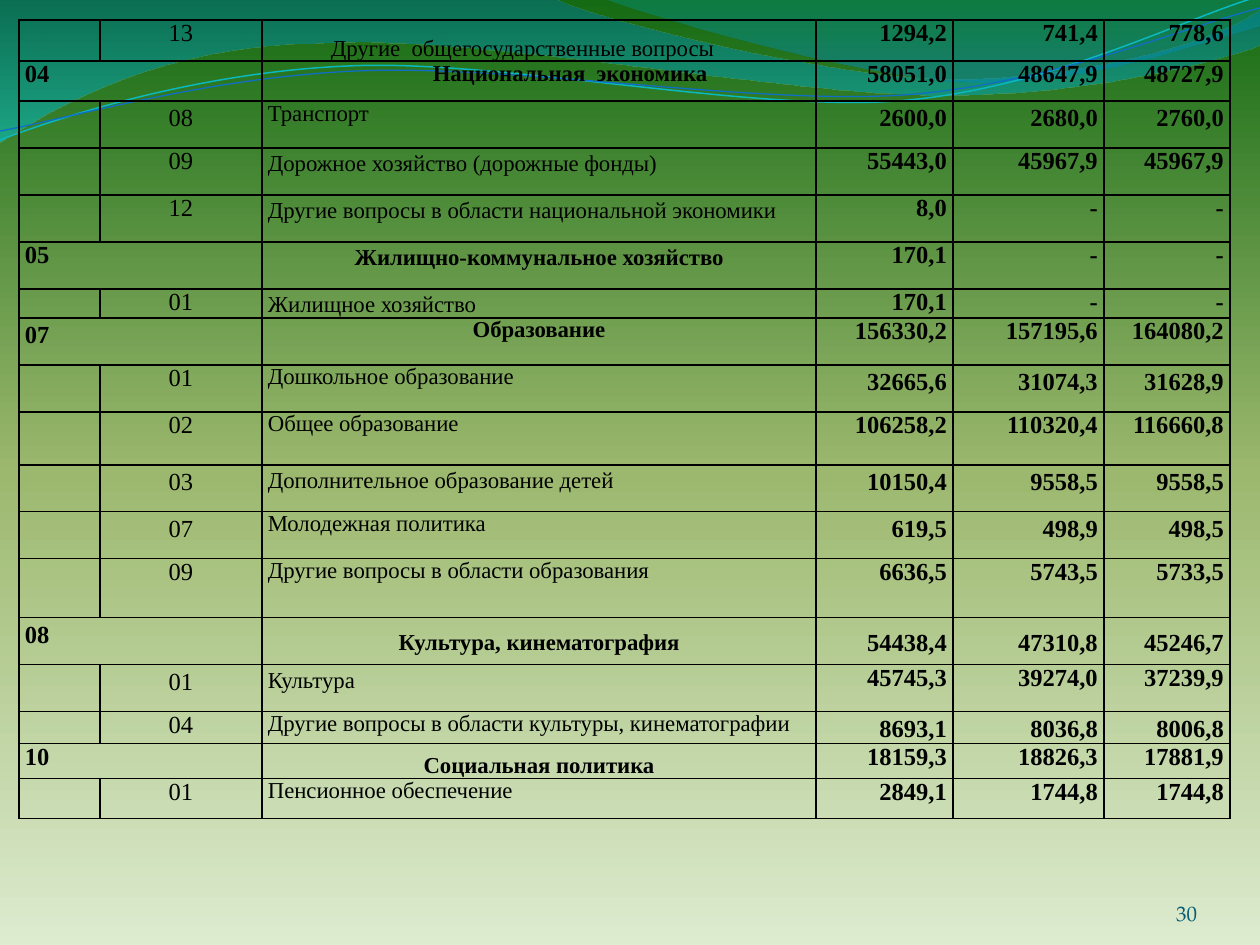
"""Builds a budget expenditure table slide on a green gradient with waves."""
import math
from dataclasses import dataclass, replace
from typing import NamedTuple, Optional

from lxml import etree
from pptx import Presentation
from pptx.dml.color import RGBColor
from pptx.enum.text import MSO_ANCHOR, PP_ALIGN
from pptx.oxml.ns import qn
from pptx.util import Pt

SCALE = 914400 / 126
LEFT, CENTER, RIGHT, JUSTIFY = PP_ALIGN.LEFT, PP_ALIGN.CENTER, PP_ALIGN.RIGHT, PP_ALIGN.JUSTIFY
TOP, MIDDLE, BOTTOM = MSO_ANCHOR.TOP, MSO_ANCHOR.MIDDLE, MSO_ANCHOR.BOTTOM
BLACK = "000000"
TILT = 2.7
PIVOT = (629, 72)


@dataclass(frozen=True)
class Style:
    align: PP_ALIGN = LEFT
    size: int = 14
    bold: bool = False
    anchor: MSO_ANCHOR = TOP
    spacing: Optional[float] = None
    before: int = 0
    after: int = 0
    margin: int = 0
    indent: int = 0
    font: str = "Times New Roman"
    color: str = BLACK


class Stop(NamedTuple):
    pos: int
    color: str
    alpha: int = 100


class Wave(NamedTuple):
    start: tuple
    segments: list
    stops: Optional[list] = None
    color: Optional[str] = None
    width: float = 0


class Row(NamedTuple):
    height: int
    code: str
    title: str
    values: str
    loose: str = ""
    section: bool = False
    title_style: dict = {}
    value_style: dict = {}


LOOSE = {"spacing": 1.15, "after": 10}
COLUMNS = [81, 162, 554, 137, 151, 126]
ROWS = [
    Row(41, "13", "Другие  общегосударственные вопросы", "1294,2 741,4 778,6",
        title_style={"align": LEFT, "anchor": BOTTOM, "margin": 78, "indent": -15}),
    Row(40, "04", "Национальная  экономика", "58051,0 48647,9 48727,9", section=True,
        title_style={"indent": 62}),
    Row(47, "08", "Транспорт", "2600,0 2680,0 2760,0", "code values"),
    Row(47, "09", "Дорожное хозяйство (дорожные фонды)", "55443,0 45967,9 45967,9", "title"),
    Row(47, "12", "Другие вопросы в области национальной экономики", "8,0 - -", "title"),
    Row(47, "05", "Жилищно-коммунальное хозяйство", "170,1 - -", "title", True),
    Row(29, "01", "Жилищное хозяйство", "170,1 - -", "title"),
    Row(47, "07", "Образование", "156330,2 157195,6 164080,2", "code", True),
    Row(47, "01", "Дошкольное образование", "32665,6 31074,3 31628,9", "values"),
    Row(53, "02", "Общее образование", "106258,2 110320,4 116660,8"),
    Row(47, "03", "Дополнительное образование детей", "10150,4 9558,5 9558,5",
        "code title values"),
    Row(47, "07", "Молодежная политика", "619,5 498,9 498,5", "code values"),
    Row(59, "09", "Другие вопросы в области образования", "6636,5 5743,5 5733,5"),
    Row(47, "08", "Культура, кинематография", "54438,4 47310,8 45246,7", "code values", True,
        {"spacing": 1.5, "before": 6}, {"anchor": MIDDLE}),
    Row(47, "01", "Культура", "45745,3 39274,0 37239,9", "code title"),
    Row(32, "04", "Другие вопросы в области культуры, кинематографии",
        "8693,1 8036,8 8006,8", "values"),
    Row(35, "10", "Социальная политика", "18159,3 18826,3 17881,9", section=True,
        title_style={"anchor": BOTTOM}),
    Row(40, "01", "Пенсионное обеспечение", "2849,1 1744,8 1744,8"),
]
WAVES = [
    Wave((0, -1), [(554, -1), (600, 21, 837, 79, 955, 79), (1074, 79, 1207, 47, 1260, 11),
                   (1261, 45), (1239, 55, 1096, 96, 940, 95), (784, 95, 481, 35, 324, 43),
                   (163, 44, 58, 105, -1, 142), (0, -1)],
         [Stop(0, "0074A1", 45), Stop(100, "00C6CF", 55)]),
    Wave((604, -1), [(641, 14, 859, 78, 969, 82), (1079, 87, 1211, 40, 1260, 26), (1260, 0),
                     (604, -1)],
         [Stop(0, "00A1A9", 30), Stop(80, "008BBF", 45)]),
    Wave((0, 140), [(60, 117, 199, 72, 349, 66), (498, 59, 747, 112, 898, 101),
                    (1050, 89, 1182, 19, 1257, -3)], color="0AB8BF", width=0.85),
    Wave((0, 131), [(59, 121, 207, 77, 357, 71), (508, 64, 752, 105, 903, 95),
                    (1053, 84, 1186, 26, 1260, 8)], color="0F6FC6", width=0.75),
]


def px(n: float) -> int:
    return round(n * SCALE)


def rgb(color: str) -> RGBColor:
    return RGBColor.from_string(color)


def set_gradient(parent, stops: list, angle: int) -> None:
    """Replace the solid fill under parent with a linear gradient."""
    grad = etree.Element(qn("a:gradFill"), rotWithShape="1")
    gs_list = etree.SubElement(grad, qn("a:gsLst"))
    for stop in stops:
        gs = etree.SubElement(gs_list, qn("a:gs"), pos=str(stop.pos * 1000))
        clr = etree.SubElement(gs, qn("a:srgbClr"), val=stop.color)
        if stop.alpha < 100:
            etree.SubElement(clr, qn("a:alpha"), val=str(stop.alpha * 1000))
    etree.SubElement(grad, qn("a:lin"), ang=str(angle * 60000), scaled="0")
    parent.replace(parent.find(qn("a:solidFill")), grad)


def to_emu(coords: tuple, tilt: float) -> list:
    """Pair up coordinates, turn them about the pivot and scale them."""
    cos, sin = math.cos(math.radians(tilt)), math.sin(math.radians(tilt))
    offsets = [(x - PIVOT[0], y - PIVOT[1]) for x, y in zip(coords[::2], coords[1::2])]
    return [(px(PIVOT[0] + x * cos - y * sin), px(PIVOT[1] + x * sin + y * cos))
            for x, y in offsets]


def bend(sp, segments: list) -> None:
    """Turn the straight segments that have control points into cubic curves."""
    lines = list(sp._element.spPr.iter(qn("a:lnTo")))
    for line, points in zip(lines, segments):
        if len(points) == 3:
            curve = etree.Element(qn("a:cubicBezTo"))
            for x, y in points:
                etree.SubElement(curve, qn("a:pt"), x=str(x - sp.left), y=str(y - sp.top))
            line.getparent().replace(line, curve)


def draw_wave(s, wave: Wave) -> None:
    tilt = 0 if wave.stops else TILT
    start = to_emu(wave.start, tilt)[0]
    segments = [to_emu(seg, tilt) for seg in wave.segments]
    builder = s.shapes.build_freeform(*start)
    builder.add_line_segments([points[-1] for points in segments], close=bool(wave.stops))
    sp = builder.convert_to_shape()
    bend(sp, segments)
    sp.rotation = -tilt
    sp.shadow.inherit = False
    if wave.stops:
        sp.fill.solid()
        set_gradient(sp._element.spPr, wave.stops, 90)
        sp.line.fill.background()
    else:
        sp.fill.background()
        sp.line.color.rgb = rgb(wave.color)
        sp.line.width = Pt(wave.width)


def write(tf, text: str, style: Style) -> None:
    p = tf.paragraphs[0]
    p.alignment = style.align
    if style.spacing:
        p.line_spacing = style.spacing
    p.space_before, p.space_after = Pt(style.before), Pt(style.after)
    ppr = p._p.get_or_add_pPr()
    ppr.set("marL", str(px(style.margin)))
    ppr.set("indent", str(px(style.indent)))
    r = p.add_run()
    r.text = text
    r.font.name, r.font.size, r.font.bold = style.font, Pt(style.size), style.bold
    r.font.color.rgb = rgb(style.color)


def format_cell(cell) -> None:
    """Give a cell black borders, no fill and narrow side margins."""
    cell.margin_left = cell.margin_right = px(6)
    cell.margin_top = cell.margin_bottom = 0
    tcpr = cell._tc.get_or_add_tcPr()
    for side in ("lnL", "lnR", "lnT", "lnB"):
        ln = etree.SubElement(tcpr, qn(f"a:{side}"), w=str(Pt(1)))
        etree.SubElement(etree.SubElement(ln, qn("a:solidFill")), qn("a:srgbClr"), val=BLACK)
    cell.fill.background()


def fill_row(table, i: int, row: Row) -> None:
    cells = [table.cell(i, j) for j in range(len(COLUMNS))]
    for cell in cells:
        format_cell(cell)
    if row.section:
        cells[0].merge(cells[1])
    else:
        etree.SubElement(cells[0].text_frame.paragraphs[0]._p, qn("a:endParaRPr"), sz="1200")
    code = Style(LEFT if row.section else CENTER, bold=row.section)
    title = Style(CENTER if row.section else JUSTIFY, 13, row.section)
    value = replace(Style(RIGHT, bold=True), **row.value_style)
    entries = [("code", cells[0 if row.section else 1], row.code, code),
               ("title", cells[2], row.title, replace(title, **row.title_style))]
    entries += [("values", c, v, value) for c, v in zip(cells[3:], row.values.split())]
    for kind, cell, text, style in entries:
        if kind in row.loose.split():
            style = replace(style, **LOOSE)
        cell.vertical_anchor = style.anchor
        write(cell.text_frame, text, style)


def draw_table(s, x: int, y: int) -> None:
    frame = s.shapes.add_table(len(ROWS), len(COLUMNS), px(x), px(y), px(sum(COLUMNS)),
                               px(sum(row.height for row in ROWS)))
    table = frame.table
    table.first_row = table.horz_banding = False
    for column, width in zip(table.columns, COLUMNS):
        column.width = px(width)
    for i, row in enumerate(ROWS):
        table.rows[i].height = px(row.height)
        fill_row(table, i, row)


def draw_number(s, text: str) -> None:
    tf = s.shapes.add_textbox(px(1092), px(876), px(105), px(50)).text_frame
    tf.word_wrap = True
    tf.vertical_anchor = BOTTOM
    tf.margin_left = tf.margin_right = tf.margin_top = tf.margin_bottom = 0
    write(tf, text, Style(RIGHT, 12, font="TeX Gyre Pagella", color="045D75"))


def main() -> None:
    prs = Presentation()
    prs.slide_width, prs.slide_height = px(1260), px(945)
    s = prs.slides.add_slide(prs.slide_layouts[6])
    s.background.fill.solid()
    set_gradient(s._element.cSld.find(qn("p:bg")).find(qn("p:bgPr")),
                 [Stop(0, "DDEBCF"), Stop(50, "9CB86E"), Stop(100, "156B13")], 270)
    for wave in WAVES:
        draw_wave(s, wave)
    draw_table(s, 19, 20)
    draw_number(s, "30")
    prs.save("out.pptx")


if __name__ == "__main__":
    main()
